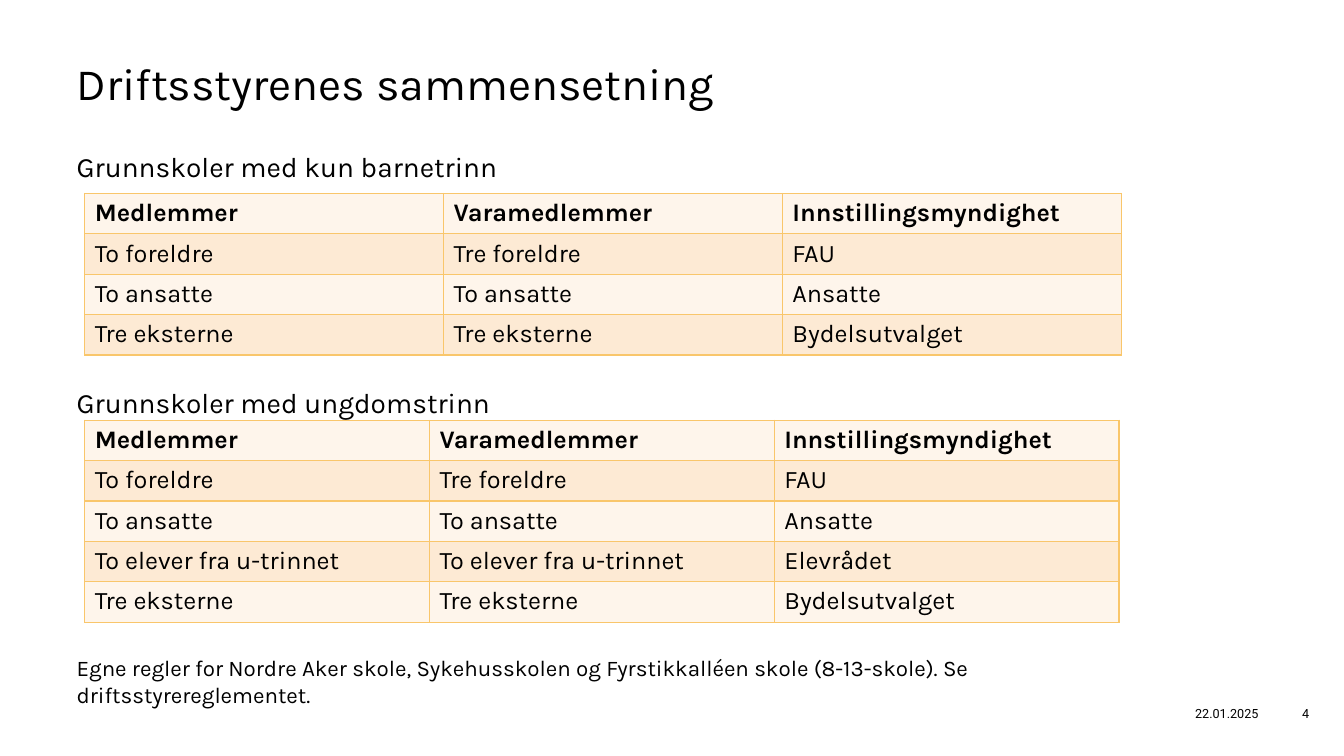
import dataclasses

import pptx
import pptx.dml.color
import pptx.enum.text
import pptx.oxml.ns
import pptx.util
from lxml import etree

Inches = pptx.util.Inches
Pt = pptx.util.Pt
ALIGN = pptx.enum.text.PP_ALIGN
ANCHOR = pptx.enum.text.MSO_ANCHOR


@dataclasses.dataclass(frozen=True)
class Theme:
    """Fonts, type sizes and colours of the slide."""
    font: str = "Karla"
    footer_font: str = "Roboto"
    title: int = 32
    heading: int = 20
    cell: int = 18
    note: int = 16
    footer: int = 9
    text: str = "000000"
    border: str = "F9C66B"
    bands: tuple = ("FEF5EB", "FDEAD4")


THEME = Theme()
HEADER = ("Medlemmer", "Varamedlemmer", "Innstillingsmyndighet")
PARENTS = ("To foreldre", "Tre foreldre", "FAU")
STAFF = ("To ansatte", "To ansatte", "Ansatte")
PUPILS = ("To elever fra u-trinnet", "To elever fra u-trinnet", "Elevrådet")
EXTERNAL = ("Tre eksterne", "Tre eksterne", "Bydelsutvalget")
BODY = (
    ("Grunnskoler med kun barnetrinn", THEME.heading, 0),
    ("Grunnskoler med ungdomstrinn", THEME.heading, 144.5),
    ("Egne regler for Nordre Aker skole, Sykehusskolen og Fyrstikkalléen "
     "skole (8-13-skole). Se driftsstyrereglementet.", THEME.note, 168),
)


def format_runs(p, size, font=THEME.font, bold=False):
    """Apply the type style to every run of a paragraph."""
    for r in p.runs:
        r.font.name = font
        r.font.size = Pt(size)
        r.font.bold = bold
        r.font.color.rgb = pptx.dml.color.RGBColor.from_string(THEME.text)


def place(sp, left, top, width, height):
    """Move and size a shape, in inches."""
    sp.left, sp.top = Inches(left), Inches(top)
    sp.width, sp.height = Inches(width), Inches(height)


def prepare_frame(sp):
    """Give a placeholder a plain frame anchored at the top."""
    tf = sp.text_frame
    tf.margin_left = tf.margin_right = tf.margin_top = tf.margin_bottom = 0
    tf.vertical_anchor = ANCHOR.TOP
    tf.auto_size = pptx.enum.text.MSO_AUTO_SIZE.NONE
    tf.word_wrap = True
    return tf


def fill_title(sp, text):
    """Write the slide title."""
    place(sp, 0.76, 0.55, 10.36, 0.8)
    tf = prepare_frame(sp)
    tf.text = text
    p = tf.paragraphs[0]
    p.alignment = ALIGN.LEFT
    format_runs(p, THEME.title)


def fill_body(sp, items):
    """Write the table headings and the closing note."""
    place(sp, 0.76, 1.48, 10.36, 5.56)
    tf = prepare_frame(sp)
    tf.text = "\n".join(text for text, size, gap in items)
    for p, (text, size, gap) in zip(tf.paragraphs, items):
        pPr = p._p.get_or_add_pPr()
        pPr.set("marL", "0")
        pPr.set("indent", "0")
        etree.SubElement(pPr, pptx.oxml.ns.qn("a:buNone"))
        p.space_before = Pt(gap)
        format_runs(p, size)


def add_borders(cell):
    """Draw a thin line on all four sides of a cell."""
    qn = pptx.oxml.ns.qn
    tcPr = cell._tc.get_or_add_tcPr()
    for side in ("lnL", "lnR", "lnT", "lnB"):
        ln = etree.SubElement(tcPr, qn(f"a:{side}"), w=str(Pt(1)))
        fill = etree.SubElement(ln, qn("a:solidFill"))
        etree.SubElement(fill, qn("a:srgbClr"), val=THEME.border)


def add_board_table(s, top, widths, rows):
    """Add a banded table with a bold header row."""
    row_height = Inches(0.39)
    table = s.shapes.add_table(len(rows), len(widths), Inches(0.84), Inches(top),
                               Inches(sum(widths)), row_height * len(rows)).table
    for column, width in zip(table.columns, widths):
        column.width = Inches(width)
    for i, row in enumerate(rows):
        table.rows[i].height = row_height
        for j, text in enumerate(row):
            cell = table.cell(i, j)
            cell.text_frame.text = text
            format_runs(cell.text_frame.paragraphs[0], THEME.cell, bold=i == 0)
            add_borders(cell)
            cell.fill.solid()
            cell.fill.fore_color.rgb = pptx.dml.color.RGBColor.from_string(
                THEME.bands[i % 2])


def add_footer(s, text, left, width, align):
    """Add a small text at the foot of the slide."""
    sp = s.shapes.add_textbox(Inches(left), Inches(6.88), Inches(width), Inches(0.4))
    tf = sp.text_frame
    tf.word_wrap = True
    tf.vertical_anchor = ANCHOR.MIDDLE
    tf.text = text
    p = tf.paragraphs[0]
    p.alignment = align
    format_runs(p, THEME.footer, THEME.footer_font)


def main():
    """Build the slide and save it."""
    prs = pptx.Presentation()
    prs.slide_width, prs.slide_height = Inches(13.33), Inches(7.5)
    s = prs.slides.add_slide(prs.slide_layouts[1])
    fill_title(s.shapes.title, "Driftsstyrenes sammensetning")
    fill_body(s.placeholders[1], BODY)
    add_footer(s, "22.01.2025", 11.11, 1.47, ALIGN.RIGHT)
    add_footer(s, "4", 12.57, 0.76, ALIGN.CENTER)
    add_board_table(s, 1.92, (3.56, 3.36, 3.36), (HEADER, PARENTS, STAFF, EXTERNAL))
    add_board_table(s, 4.17, (3.42, 3.42, 3.42),
                    (HEADER, PARENTS, STAFF, PUPILS, EXTERNAL))
    prs.save("out.pptx")


if __name__ == "__main__":
    main()
